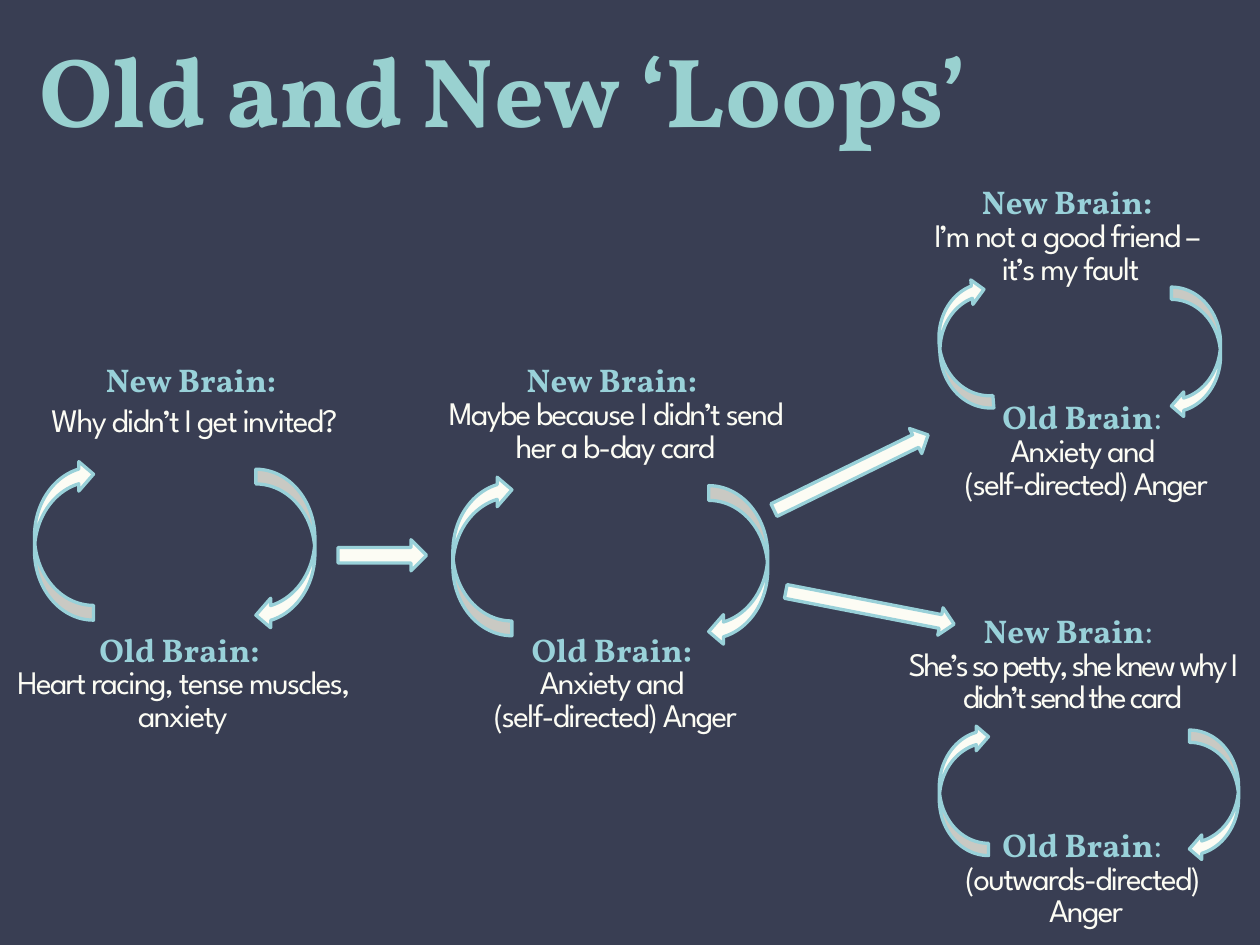
import pptx
import pptx.util
import pptx.dml.color
import pptx.enum.shapes
import pptx.enum.text

Pt = pptx.util.Pt
KIND = pptx.enum.shapes.MSO_SHAPE
ALIGN = pptx.enum.text.PP_ALIGN
ANCHOR = pptx.enum.text.MSO_ANCHOR
FIT = pptx.enum.text.MSO_AUTO_SIZE

HEX = {"back": "393E53", "title": "99D1D0", "head": "99D1D9", "body": "FCFCF4"}
WIDE = 234  # width of every caption


def tint(name):
    return pptx.dml.color.RGBColor.from_string(HEX[name])


def style(run, face, size, hue, bold=False, space=0):
    font = run.font
    font.name, font.size, font.bold = face, Pt(size), bold
    font.color.rgb = tint(hue)
    if space:
        run._r.get_or_add_rPr().set("spc", str(int(space * 100)))


def add_title(slide, box):
    title = slide.shapes.title
    title.left, title.top, title.width, title.height = map(Pt, box)
    frame = title.text_frame
    frame.text = "Old and New ‘Loops’"
    frame.auto_size = FIT.SHAPE_TO_FIT_TEXT
    frame.vertical_anchor = ANCHOR.TOP
    frame.margin_left = frame.margin_right = 0
    frame.margin_top = frame.margin_bottom = 0
    para = frame.paragraphs[0]
    para.alignment = ALIGN.LEFT
    para.line_spacing = Pt(60)
    style(para.runs[0], "Vollkorn", 60, "title", True)


def add_arrow(slide, kind, box, turn=0):
    shape = slide.shapes.add_shape(kind, *map(Pt, box))
    shape.rotation = turn
    shape.shadow.inherit = False
    shape.fill.solid()
    shape.fill.fore_color.rgb = tint("body")
    shape.line.color.rgb = tint("head")
    shape.line.width = Pt(2)


def add_note(slide, box, head, lines, thin=False, lead=20, space=-1):
    """Caption: bold heading (its colon light if thin) over body lines."""
    shape = slide.shapes.add_textbox(*map(Pt, box))
    frame = shape.text_frame
    frame.word_wrap = True
    frame.auto_size = FIT.SHAPE_TO_FIT_TEXT
    para = frame.paragraphs[0]
    para.alignment = ALIGN.CENTER
    para.text = head if thin else head + ": "
    style(para.runs[0], "Vollkorn", 20, "head", True)
    if thin:
        colon = para.add_run()
        colon.text = ": "
        style(colon, "Calibri", 20, "head")
    for line in lines:
        para = frame.add_paragraph()
        para.text = line
        para.alignment = ALIGN.CENTER
        if lead:
            para.line_spacing = Pt(lead)
        style(para.runs[0], "League Spartan", 20, "body", space=space)


def add_loop(slide, box, new, old, shift, right, left, size, turn=180):
    """New brain caption at the box corner; other parts are offsets from it."""
    x, y = box

    def place(off, dims):
        return (x + off[0], y + off[1], *dims)

    add_note(slide, place((0, 0), (WIDE, 72)), "New Brain", **new)
    add_note(slide, place(shift, (WIDE, 72)), "Old Brain", **old)
    add_arrow(slide, KIND.CURVED_LEFT_ARROW, place(right, size))
    add_arrow(slide, KIND.CURVED_LEFT_ARROW, place(left, size), turn)


def main():
    deck = pptx.Presentation()
    deck.slide_width, deck.slide_height = Pt(768), Pt(576)
    slide = deck.slides.add_slide(deck.slide_layouts[5])
    slide.background.fill.solid()
    slide.background.fill.fore_color.rgb = tint("back")
    add_title(slide, (24, 30, 732, 61))

    big, small = (36, 98), (30, 80)
    anger = ["Anxiety and ", "(self-directed) Anger"]

    # First thought
    add_loop(slide, (1.5, 216),
             dict(lines=["Why didn’t I get invited?"], lead=None),
             dict(lines=["Heart racing, tense muscles, anxiety"]),
             (-7, 164), (154.5, 70), (19.5, 64), big)

    # Second thought
    add_loop(slide, (258, 216),
             dict(lines=["Maybe because I didn’t send her a b-day card"]),
             dict(lines=anger),
             (0, 164), (174, 80), (18, 73.5), big)

    # Self-blame branch
    add_loop(slide, (535.5, 107.5),
             dict(lines=["I’m not a good friend – ", "it’s my fault"]),
             dict(lines=anger, thin=True),
             (9.5, 131), (178.5, 67.5), (37, 62.5), small, 175.2)

    # Blaming-others branch
    add_loop(slide, (536.5, 368.5),
             dict(lines=["She’s so petty, she knew why I didn’t send the card"],
                  thin=True, space=-1.5),
             dict(lines=["(outwards-directed) ", "Anger"], thin=True),
             (8.5, 130.5), (188.5, 76.5), (36, 73), small)

    # Arrows between the loops
    for box, turn in (((206, 329, 54, 19), 0),
                      ((466.5, 279.5, 104.5, 17), 334),
                      ((478, 362, 104.5, 17), 11)):
        add_arrow(slide, KIND.RIGHT_ARROW, box, turn)

    deck.save("out.pptx")


if __name__ == "__main__":
    main()
